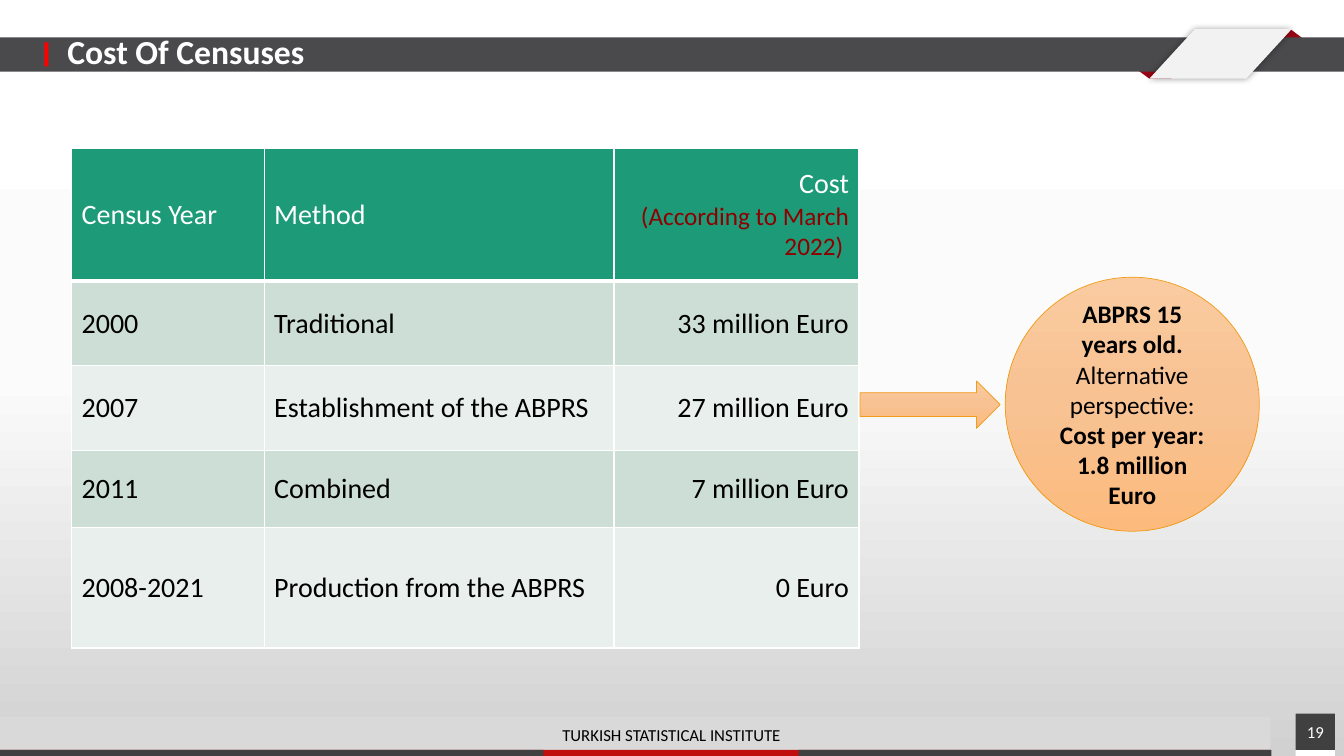
from dataclasses import dataclass
from copy import deepcopy

from pptx import Presentation
from pptx.dml.color import RGBColor
from pptx.enum.shapes import MSO_SHAPE
from pptx.enum.text import MSO_ANCHOR, MSO_AUTO_SIZE, PP_ALIGN
from pptx.oxml import parse_xml
from pptx.oxml.ns import nsdecls, qn
from pptx.util import Pt

PX = 9144  # EMU, 100 px to the inch


@dataclass(frozen=True)
class Theme:
    font: str = "Calibri"
    title: int = 24
    table: int = 20
    note: int = 18
    footer: int = 12
    white: str = "FFFFFF"
    black: str = "000000"
    dark: str = "404040"
    band: str = "4A4A4D"
    footer_band: str = "D9D9D9"
    red: str = "C00D0D"
    marker: str = "FF0000"
    fold: str = "9A0616"
    plate: str = "F2F2F2"
    header: str = "1D9A78"
    header_note: str = "8E0000"
    row_fills: tuple = ("CDDED6", "E8EFEC")
    outline: str = "F19D19"
    backdrop: tuple = ("FFFFFF", "FBFBFB", "D1D1D1")
    callout: tuple = ("FACBA0", "F8C292", "FCBA7D")


THEME = Theme()

COLUMN_WIDTHS = (191, 347, 243)
ROW_HEIGHTS = (132, 84, 84, 76, 120)
CENSUSES = (
    ("Census Year", "Method", "Cost\n(According to March 2022) "),
    ("2000", "Traditional", "33 million Euro"),
    ("2007", "Establishment of the ABPRS", "27 million Euro"),
    ("2011", "Combined", "7 million Euro"),
    ("2008-2021", "Production from the ABPRS", "0 Euro"),
)


def rgb(colour):
    return RGBColor.from_string(colour)


def scaled(*lengths):
    return [length * PX for length in lengths]


def fill_solid(fill, colour):
    fill.solid()
    fill.fore_color.rgb = rgb(colour)


def fill_gradient(owner, fill, colours):
    """Fill from top to bottom with three evenly spaced colours."""
    fill.gradient()
    fill.gradient_angle = 270
    stop_list = owner.element.find(".//" + qn("a:gsLst"))
    stop_list.insert(1, deepcopy(stop_list[0]))
    for index, (stop, colour) in enumerate(zip(fill.gradient_stops, colours)):
        stop.position = index / 2
        stop.color.rgb = rgb(colour)


def format_paragraph(paragraph, size, colour, bold=False, align=PP_ALIGN.LEFT):
    paragraph.alignment = align
    for run in paragraph.runs:
        run.font.name = THEME.font
        run.font.size = Pt(size)
        run.font.bold = bold
        run.font.color.rgb = rgb(colour)


def add_plain_shape(slide, preset, box):
    shape = slide.shapes.add_shape(preset, *scaled(*box))
    shape.shadow.inherit = False
    return shape


def add_bar(slide, box, colour):
    bar = add_plain_shape(slide, MSO_SHAPE.RECTANGLE, box)
    fill_solid(bar.fill, colour)
    bar.line.fill.background()
    return bar


def add_slant(slide, points, colour):
    builder = slide.shapes.build_freeform(*points[0], scale=PX)
    builder.add_line_segments(points[1:], close=True)
    slant = builder.convert_to_shape()
    slant.shadow.inherit = False
    fill_solid(slant.fill, colour)
    slant.line.fill.background()
    return slant


def add_soft_shadow(shape):
    effects = shape.element.spPr.find(qn("a:effectLst"))
    effects.append(parse_xml(
        f'<a:outerShdw {nsdecls("a")} blurRad="{Pt(5)}" dist="0" dir="0">'
        f'<a:srgbClr val="{THEME.black}"><a:alpha val="40000"/></a:srgbClr>'
        '</a:outerShdw>'))


def add_callout_shape(slide, preset, box):
    shape = add_plain_shape(slide, preset, box)
    fill_gradient(shape, shape.fill, THEME.callout)
    shape.line.color.rgb = rgb(THEME.outline)
    shape.line.width = Pt(0.5)
    return shape


def add_text(slide, box, text, wrap=True):
    text_box = slide.shapes.add_textbox(*scaled(*box))
    text_box.text_frame.word_wrap = wrap
    text_box.text_frame.text = text
    return text_box.text_frame


def add_header(slide):
    add_slant(slide, [(1280, 29), (1259, 29), (1270, 38), (1292, 38)], THEME.fold)
    add_slant(slide, [(1151, 70), (1129, 70), (1140, 78), (1162, 78)], THEME.fold)
    add_bar(slide, (0, 37, 1333, 34), THEME.band)
    plate = add_slant(
        slide, [(1281, 29), (1185, 29), (1140, 78), (1236, 78)], THEME.plate)
    add_soft_shadow(plate)
    add_bar(slide, (44, 42, 4, 24), THEME.marker)
    frame = add_text(slide, (57, 41, 769, 25), "Cost Of Censuses")
    frame.vertical_anchor = MSO_ANCHOR.MIDDLE
    frame.paragraphs[0].line_spacing = 0.9
    format_paragraph(frame.paragraphs[0], THEME.title, THEME.white, bold=True)


def add_footer(slide):
    add_bar(slide, (0, 711, 1260, 39), THEME.footer_band)
    add_bar(slide, (0, 744, 1260, 6), THEME.red)
    add_bar(slide, (1285, 744, 39, 6), THEME.white)
    add_bar(slide, (792, 744, 469, 6), THEME.dark)
    add_bar(slide, (0, 744, 539, 6), THEME.dark)

    number = add_bar(slide, (1285, 708, 39, 36), THEME.dark).text_frame
    number.text = "19"
    number.vertical_anchor = MSO_ANCHOR.MIDDLE
    number.margin_left = number.margin_right = 0
    number.margin_top = number.margin_bottom = 0
    format_paragraph(number.paragraphs[0], THEME.footer, THEME.white,
                     align=PP_ALIGN.CENTER)

    institute = add_text(slide, (535, 714, 262, 30),
                         "TURKISH STATISTICAL INSTITUTE", wrap=False)
    institute.auto_size = MSO_AUTO_SIZE.SHAPE_TO_FIT_TEXT
    format_paragraph(institute.paragraphs[0], THEME.footer, THEME.black,
                     align=PP_ALIGN.CENTER)


def set_borders(cell, bottom_width):
    properties = cell._tc.get_or_add_tcPr()
    for side, width in (("L", 1), ("R", 1), ("T", 1), ("B", bottom_width)):
        properties.append(parse_xml(
            f'<a:ln{side} {nsdecls("a")} w="{Pt(width)}"><a:solidFill>'
            f'<a:srgbClr val="{THEME.white}"/></a:solidFill></a:ln{side}>'))


def fill_cell(cell, text, row, column):
    is_header = row == 0
    set_borders(cell, 3 if is_header else 1)
    fill_solid(cell.fill,
               THEME.header if is_header else THEME.row_fills[(row - 1) % 2])
    cell.vertical_anchor = MSO_ANCHOR.MIDDLE
    cell.text_frame.text = text
    align = PP_ALIGN.RIGHT if column == 2 else PP_ALIGN.LEFT
    colour = THEME.white if is_header else THEME.black
    first, *notes = cell.text_frame.paragraphs
    format_paragraph(first, THEME.table, colour, align=align)
    for note in notes:
        format_paragraph(note, THEME.note, THEME.header_note, align=align)


def add_cost_table(slide):
    box = scaled(71, 147, sum(COLUMN_WIDTHS), sum(ROW_HEIGHTS))
    table = slide.shapes.add_table(len(CENSUSES), len(COLUMN_WIDTHS), *box).table
    table.horz_banding = False
    for column, width in zip(table.columns, scaled(*COLUMN_WIDTHS)):
        column.width = width
    for row, height in zip(table.rows, scaled(*ROW_HEIGHTS)):
        row.height = height
    for row, texts in enumerate(CENSUSES):
        for column, text in enumerate(texts):
            fill_cell(table.cell(row, column), text, row, column)


def add_yearly_cost(slide):
    add_callout_shape(slide, MSO_SHAPE.RIGHT_ARROW, (853, 378, 139, 47))
    circle = add_callout_shape(slide, MSO_SHAPE.OVAL, (997, 275, 252, 252))
    frame = circle.text_frame
    frame.word_wrap = True
    frame.vertical_anchor = MSO_ANCHOR.MIDDLE
    frame.text = ("ABPRS 15 years old.\nAlternative perspective:\n"
                  "Cost per year: 1.8 million Euro")
    for paragraph, bold in zip(frame.paragraphs, (True, False, True)):
        format_paragraph(paragraph, THEME.note, THEME.black, bold, PP_ALIGN.CENTER)


def main():
    presentation = Presentation()
    presentation.slide_width, presentation.slide_height = scaled(1333, 750)
    slide = presentation.slides.add_slide(presentation.slide_layouts[6])
    fill_gradient(slide, slide.background.fill, THEME.backdrop)
    add_footer(slide)
    add_header(slide)
    add_cost_table(slide)
    add_yearly_cost(slide)
    presentation.save("out.pptx")


if __name__ == "__main__":
    main()
